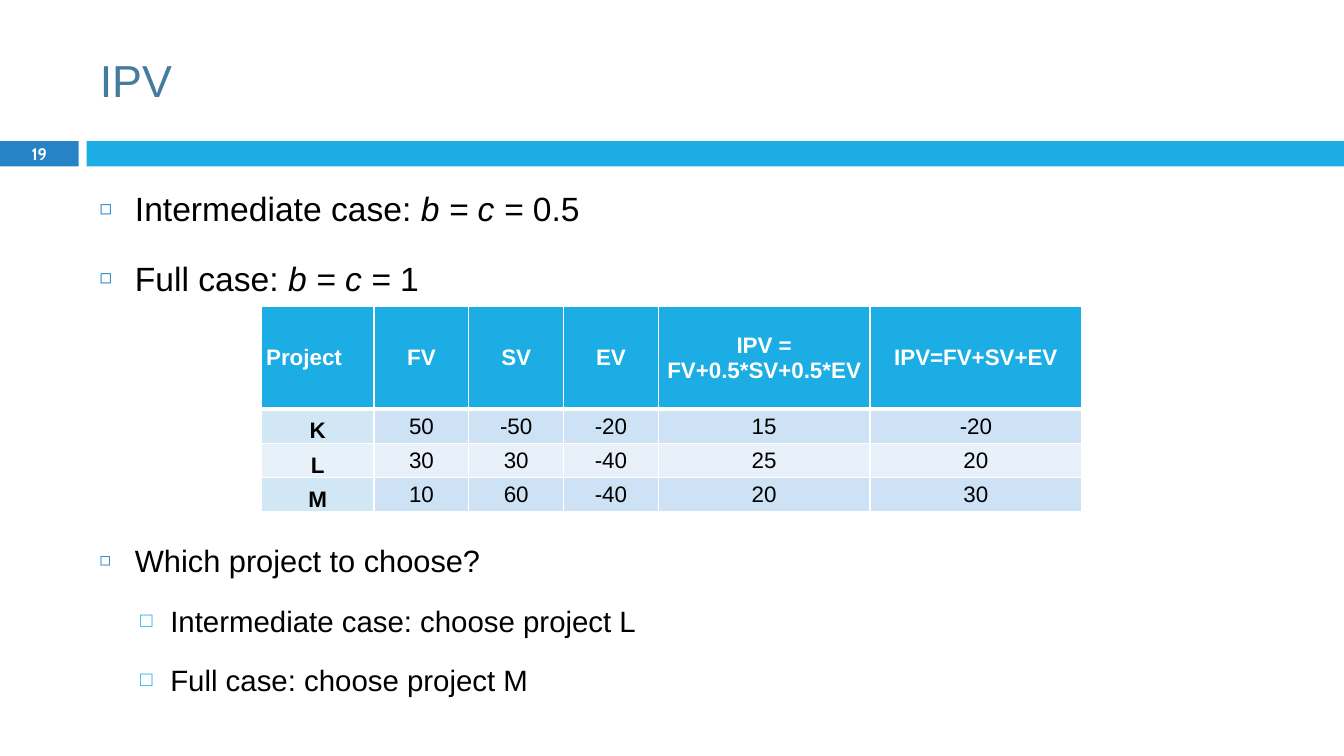
from dataclasses import dataclass

from lxml import etree
from pptx import Presentation
from pptx.dml.color import RGBColor
from pptx.enum import shapes, text
from pptx.oxml import ns
from pptx.util import Inches, Pt


@dataclass(frozen=True)
class Theme:
    font: str = "Arial"
    number_font: str = "Cabin"
    title: str = "457B9E"
    blue: str = "2683C6"
    cyan: str = "1CADE4"
    white: str = "FFFFFF"
    black: str = "000000"
    bands: tuple = (("D1E7F6", "CDE3F5"), ("E7F1FA", "E8F1FA"))
    title_size: float = 32
    case_size: float = 24
    question_size: float = 22
    answer_size: float = 21
    table_size: float = 16
    number_size: float = 11.9


theme = Theme()


def add_run(paragraph, words, size, color, **formats):
    run = paragraph.add_run()
    run.text = words
    run.font.color.rgb = RGBColor.from_string(color)
    for name, value in {"name": theme.font, "size": Pt(size), **formats}.items():
        setattr(run.font, name, value)


def add_element(parent, tag, **attributes):
    return etree.SubElement(parent, ns.qn(tag), attributes)


presentation = Presentation()
presentation.slide_width = Inches(13.33)
presentation.slide_height = Inches(7.5)
slide = presentation.slides.add_slide(presentation.slide_layouts[5])

# Bars under the title
for left, width, color in ((0, 0.78, theme.blue), (0.86, 12.47, theme.cyan)):
    bar = slide.shapes.add_shape(shapes.MSO_SHAPE.RECTANGLE, Inches(left), Inches(1.4),
                                 Inches(width), Inches(0.25))
    bar.shadow.inherit = False
    bar.fill.solid()
    bar.fill.fore_color.rgb = RGBColor.from_string(color)
    bar.line.fill.background()

# Title
title = slide.shapes.title
title.left, title.top = Inches(0.89), Inches(0.25)
title.width, title.height = Inches(11.89), Inches(1.08)
title.text_frame.vertical_anchor = text.MSO_ANCHOR.MIDDLE
title_paragraph = title.text_frame.paragraphs[0]
title_paragraph.alignment = text.PP_ALIGN.LEFT
add_run(title_paragraph, "IPV", theme.title_size, theme.title)

# Slide number
number = slide.shapes.add_textbox(0, Inches(1.39), Inches(0.78), Inches(0.27))
number.text_frame.word_wrap = True
number.text_frame.vertical_anchor = text.MSO_ANCHOR.MIDDLE
number_paragraph = number.text_frame.paragraphs[0]
number_paragraph.alignment = text.PP_ALIGN.CENTER
add_run(number_paragraph, "19", theme.number_size, theme.white,
        name=theme.number_font, bold=True)

# Bullets: level, size, space before, runs as (words, italic);
# the space before the question leaves room for the table
bullets = (
    (0, theme.case_size, 9, (("Intermediate case: ", False), ("b = c =", True), (" 0.5", False))),
    (0, theme.case_size, 9, (("Full case: ", False), ("b = c = ", True), ("1", False))),
    (0, theme.question_size, 164, (("Which project to choose?", False),)),
    (1, theme.answer_size, 7, (("Intermediate case: choose project L", False),)),
    (1, theme.answer_size, 7, (("Full case: choose project M", False),)),
)
bullet_styles = (
    {"margin": 0.35, "indent": -0.35, "color": theme.blue, "percent": "60000", "mark": "◻"},
    {"margin": 0.7, "indent": -0.3, "color": theme.cyan, "percent": "70000", "mark": "□"},
)
body = slide.shapes.add_textbox(Inches(0.89), Inches(1.66), Inches(11.52), Inches(5.39))
body.text_frame.word_wrap = True
for index, (level, size, space, runs) in enumerate(bullets):
    paragraph = body.text_frame.paragraphs[0] if index == 0 else body.text_frame.add_paragraph()
    paragraph.level = level
    paragraph.line_spacing = 1.4
    paragraph.space_before = Pt(space)
    for words, italic in runs:
        add_run(paragraph, words, size, theme.black, italic=italic)
    style = bullet_styles[level]
    properties = paragraph._p.get_or_add_pPr()
    properties.set("marL", str(Inches(style["margin"])))
    properties.set("indent", str(Inches(style["indent"])))
    add_element(add_element(properties, "a:buClr"), "a:srgbClr", val=style["color"])
    add_element(properties, "a:buSzPct", val=style["percent"])
    add_element(properties, "a:buFont", typeface=theme.font)
    add_element(properties, "a:buChar", char=style["mark"])

# Project table
rows = (
    ("Project", "FV", "SV", "EV", "IPV =\nFV+0.5*SV+0.5*EV", "IPV=FV+SV+EV"),
    ("K", "50", "-50", "-20", "15", "-20"),
    ("L", "30", "30", "-40", "25", "20"),
    ("M", "10", "60", "-40", "20", "30"),
)
column_widths = (1.12, 0.94, 0.94, 0.94, 2.1, 2.1)
row_heights = (1.02, 0.34, 0.34, 0.34)
table = slide.shapes.add_table(len(rows), len(column_widths), Inches(2.59), Inches(3.04),
                               Inches(sum(column_widths)), Inches(sum(row_heights))).table
for column, width in zip(table.columns, column_widths):
    column.width = Inches(width)
for row, height in zip(table.rows, row_heights):
    row.height = Inches(height)

for row_index, values in enumerate(rows):
    header = row_index == 0
    for column_index, value in enumerate(values):
        first = column_index == 0
        cell = table.cell(row_index, column_index)
        cell.margin_left = cell.margin_right = Inches(0.05)
        cell.margin_top = cell.margin_bottom = 0
        bottom = first and not header
        cell.vertical_anchor = text.MSO_ANCHOR.BOTTOM if bottom else text.MSO_ANCHOR.MIDDLE

        paragraph = cell.text_frame.paragraphs[0]
        left_aligned = first and header
        paragraph.alignment = text.PP_ALIGN.LEFT if left_aligned else text.PP_ALIGN.CENTER
        paragraph.space_before = paragraph.space_after = Pt(3 if header else 2)
        for line_index, line in enumerate(value.split("\n")):
            if line_index:
                paragraph.add_line_break()
            add_run(paragraph, line, theme.table_size,
                    theme.white if header else theme.black, bold=header or first)

        # Borders come before the fill in the cell properties
        properties = cell._tc.get_or_add_tcPr()
        for side in ("L", "R", "T", "B"):
            thick = (header and side == "B") or (row_index == 1 and side == "T")
            border = add_element(properties, f"a:ln{side}", w=str(Pt(3 if thick else 1)))
            add_element(add_element(border, "a:solidFill"), "a:srgbClr", val=theme.white)
        band = theme.bands[(row_index - 1) % 2]
        cell.fill.solid()
        cell.fill.fore_color.rgb = RGBColor.from_string(
            theme.cyan if header else band[0 if first else 1])

presentation.save("out.pptx")
